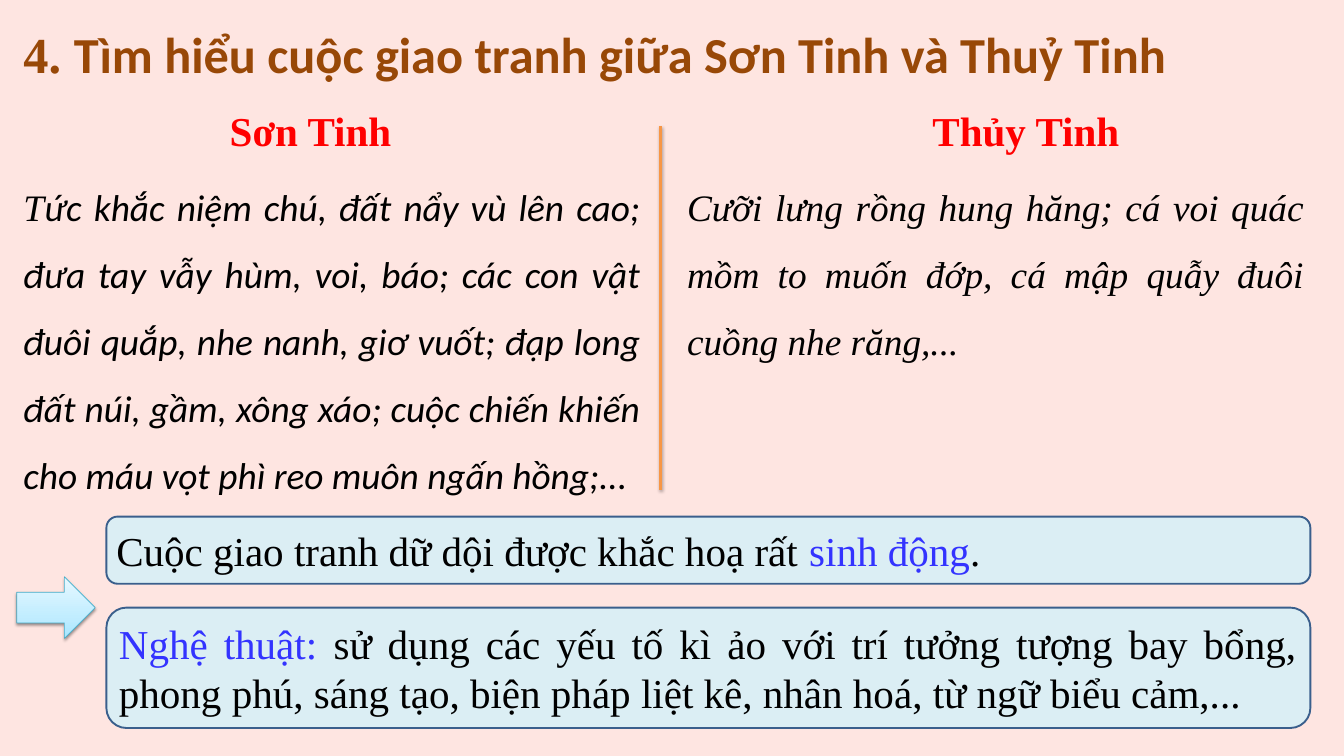
from lxml import etree
from pptx import Presentation
from pptx.dml.color import RGBColor
from pptx.enum import shapes, text
from pptx.oxml import parse_xml
from pptx.oxml.ns import nsdecls, qn
from pptx.util import Pt

THEME = {
    "serif": "Times New Roman", "sans": "Calibri",
    "title": 54, "head": 44, "body": 40,
    "back": "FEE5E1", "brown": "984807", "red": "FF0000", "ink": "000000",
    "blue": "3333FF", "rule": "F79646", "card": "DBEEF4", "edge": "3A5F8C",
    "rim": "46AAC5", "glow": ((0, "A7E6FF"), (35, "C1EDFF"), (100, "E7F8FF")),
}
LEFT, WIDE, RIGHT = 18, 675, 1404

TITLE = [("4. ", {}), ("Tìm hiểu cuộc giao tranh giữa Sơn Tinh và Thuỷ Tinh", {"font": "sans"})]
SIDES = [
    {"head": "Sơn Tinh", "at": (239, 109.5, 189.5, 60.5), "x": LEFT, "tall": 371,
     "body": [("T", {}),
              ("ức khắc niệm chú, đất nẩy vù lên cao; đưa tay vẫy hùm, voi, báo; "
               "các con vật đuôi quắp, nhe nanh, giơ vuốt; đạp long đất núi, gầm, "
               "xông xáo; cuộc chiến khiến cho máu vọt phì reo muôn ngấn hồng;...",
               {"font": "sans"})]},
    {"head": "Thủy Tinh", "at": (992, 109.5, 216.5, 60.5), "x": RIGHT - WIDE, "tall": 217.5,
     "body": [("Cưỡi lưng rồng hung hăng; cá voi quác mồm to muốn đớp, "
               "cá mập quẫy đuôi cuồng nhe răng,...", {})]},
]
CARDS = [
    (553.5, 72, [("Cuộc giao tranh dữ dội được khắc hoạ rất ", {}),
                 ("sinh động", {"color": "blue"}), (".", {})]),
    (651, 129, [("Nghệ thuật: ", {"color": "blue"}),
                ("sử dụng các yếu tố kì ảo với trí tưởng tượng bay bổng, phong phú, "
                 "sáng tạo, biện pháp liệt kê, nhân hoá, từ ngữ biểu cảm,...", {})]),
]


def rgb(name):
    return RGBColor.from_string(THEME[name])


def write(frame, runs, size="head", color="ink", font="serif", bold=False,
          italic=False, align=text.PP_ALIGN.JUSTIFY, space=None, wrap=True):
    frame.word_wrap = wrap
    para = frame.paragraphs[0]
    para.alignment = align
    if space:
        para.line_spacing = space
    for words, look in runs:
        run = para.add_run()
        run.text = words
        face = run.font
        face.size = Pt(THEME[size])
        face.bold, face.italic = bold, italic
        face.name = THEME[look.get("font", font)]
        face.color.rgb = rgb(look.get("color", color))


def add_text(slide, at, runs, **look):
    box = slide.shapes.add_textbox(*map(Pt, at))
    write(box.text_frame, runs, **look)
    box.text_frame.auto_size = text.MSO_AUTO_SIZE.SHAPE_TO_FIT_TEXT


def add_shape(slide, kind, at, edge, width):
    shape = slide.shapes.add_shape(kind, *map(Pt, at))
    shape.shadow.inherit = False
    shape.line.color.rgb = rgb(edge)
    shape.line.width = Pt(width)
    return shape


def shade(shape, alpha, dist):
    props = shape._element.spPr
    list_ = props.find(qn("a:effectLst"))
    if list_ is None:
        list_ = etree.SubElement(props, qn("a:effectLst"))
    list_.append(parse_xml(
        f'<a:outerShdw {nsdecls("a")} blurRad="{Pt(3.1)}" dist="{Pt(dist)}" '
        f'dir="5400000" rotWithShape="0"><a:srgbClr val="{THEME["ink"]}">'
        f'<a:alpha val="{alpha * 1000}"/></a:srgbClr></a:outerShdw>'))


def blend(shape):
    stops = "".join(f'<a:gs pos="{pos * 1000}"><a:srgbClr val="{tint}"/></a:gs>'
                    for pos, tint in THEME["glow"])
    shape._element.spPr.find(qn("a:prstGeom")).addnext(parse_xml(
        f'<a:gradFill {nsdecls("a")} rotWithShape="1"><a:gsLst>{stops}</a:gsLst>'
        '<a:lin ang="16200000" scaled="0"/></a:gradFill>'))


def main():
    deck = Presentation()
    deck.slide_width, deck.slide_height = Pt(1440), Pt(810)
    slide = deck.slides.add_slide(deck.slide_layouts[6])
    slide.background.fill.solid()
    slide.background.fill.fore_color.rgb = rgb("back")

    add_text(slide, (LEFT, 21, 1380, 72.5), TITLE, size="title", color="brown", bold=True)
    for side in SIDES:
        add_text(slide, side["at"], [(side["head"], {})], color="red", bold=True,
                 align=text.PP_ALIGN.LEFT, wrap=False)
        add_text(slide, (side["x"], 169.5, WIDE, side["tall"]), side["body"],
                 size="body", italic=True, space=1.5)

    rule = slide.shapes.add_connector(
        shapes.MSO_CONNECTOR.STRAIGHT, Pt(708), Pt(135.5), Pt(708), Pt(525))
    rule.line.color.rgb = rgb("rule")
    rule.line.width = Pt(3)
    shade(rule, 35, 1.8)

    arrow = add_shape(slide, shapes.MSO_SHAPE.RIGHT_ARROW, (LEFT, 618, 84, 66), "rim", 0.75)
    blend(arrow)
    shade(arrow, 38, 1.6)

    for top, tall, runs in CARDS:
        card = add_shape(slide, shapes.MSO_SHAPE.ROUNDED_RECTANGLE,
                         (114, top, RIGHT - 114, tall), "edge", 2)
        card.fill.solid()
        card.fill.fore_color.rgb = rgb("card")
        card.text_frame.vertical_anchor = text.MSO_ANCHOR.MIDDLE
        write(card.text_frame, runs)

    deck.save("out.pptx")


if __name__ == "__main__":
    main()
